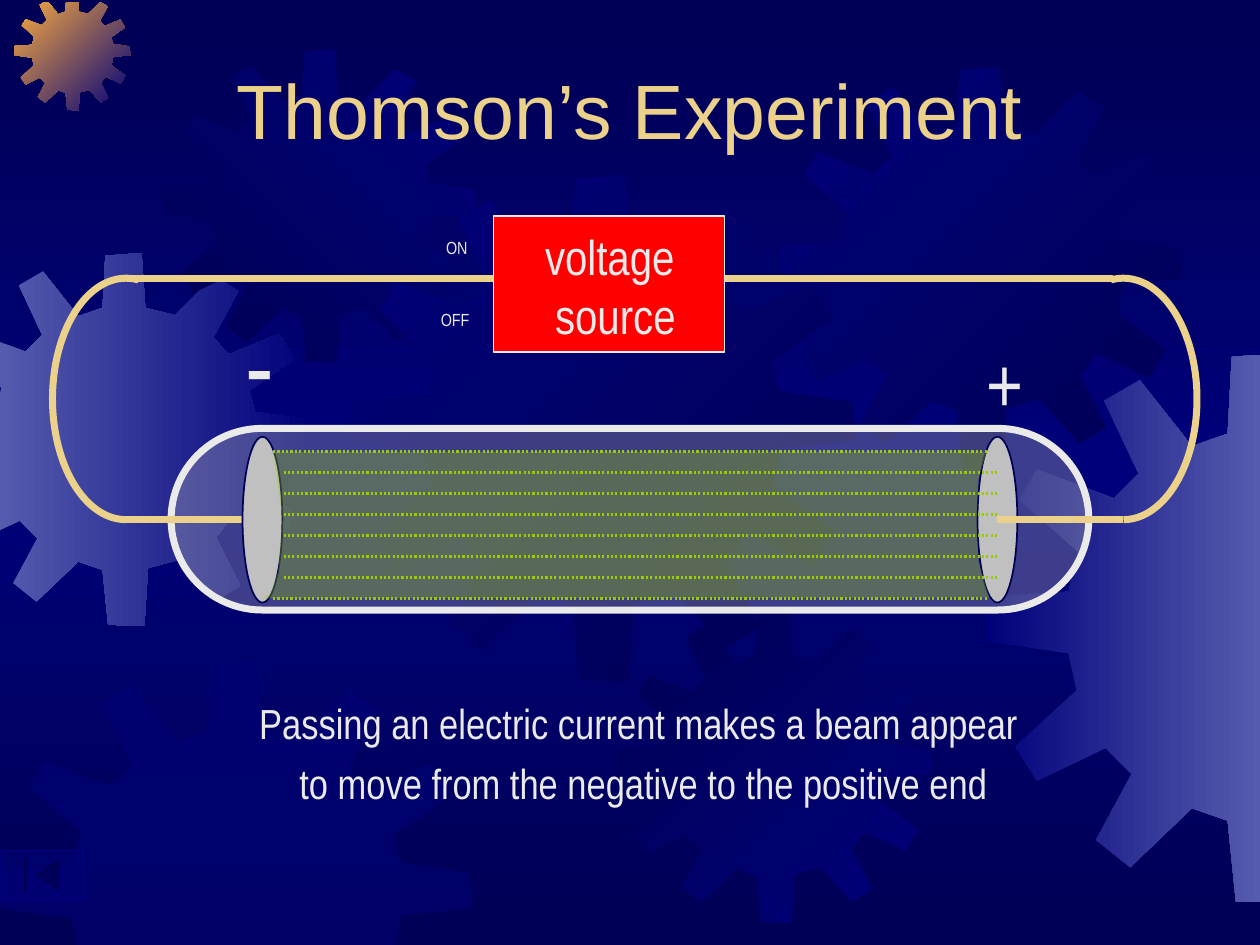
from dataclasses import dataclass
from typing import Optional

from lxml.etree import SubElement
from pptx import Presentation
from pptx.dml.color import RGBColor
from pptx.enum.dml import MSO_LINE
from pptx.enum.shapes import MSO_CONNECTOR, MSO_SHAPE
from pptx.enum.text import MSO_ANCHOR, PP_ALIGN
from pptx.oxml.ns import qn
from pptx.util import Emu, Inches, Pt

COLUMNS, ROWS = 120, 90
CELL = Inches(10) // COLUMNS
NAVY, BLUE, LILAC, ORANGE = "000054", "00007A", "555BAD", "FCAB40"
GOLD, PALE, SILVER, RED, GREEN = "EBD189", "EAEAEA", "C0C0C0", "FF0000", "99CC00"

# Outline of a gear, on a square of GEAR_SIZE units
GEAR_SIZE = 401
GEAR = [
    (255, 67), (223, 59), (219, 0), (180, 3), (177, 59), (151, 68), (113, 20), (87, 35),
    (112, 88), (94, 106), (38, 85), (25, 107), (68, 145), (61, 174), (1, 178), (0, 210),
    (61, 219), (67, 246), (22, 287), (38, 312), (88, 288), (107, 307), (81, 355), (106, 375),
    (151, 332), (177, 341), (183, 400), (222, 401), (226, 339), (259, 330), (299, 374), (325, 358),
    (299, 306), (316, 284), (368, 309), (384, 281), (336, 246), (342, 216), (401, 210), (400, 180),
    (341, 171), (335, 148), (383, 114), (367, 87), (313, 109), (296, 91), (323, 41), (297, 25),
]
BEAM = [(26, 43), (94, 43), (93.2, 45.5), (93, 49.7), (93.2, 53.5), (94.2, 56.9),
        (25, 57), (25.8, 56.5), (26.5, 54.4), (26.9, 49.4)]


@dataclass
class Gear:
    left: float
    top: float
    size: float
    start: str
    end: Optional[str] = None
    angle: int = 0


@dataclass
class Label:
    text: str
    box: tuple
    size: float
    align: PP_ALIGN = PP_ALIGN.LEFT
    wrap: bool = False
    gap: float = 0


GEARS = [
    Gear(-5.9, 24.1, 35.5, LILAC, BLUE),
    Gear(1.4, -0.5, 11, ORANGE, BLUE, 45),
    Gear(15.6, 4.7, 29.8, NAVY, BLUE, 315),
    Gear(33.2, 16.7, 48.2, BLUE, NAVY, 45),
    Gear(0, 63, 44.9, BLUE),
    Gear(58.9, 58.1, 29.8, NAVY, BLUE, 45),
    Gear(74.2, 6.4, 38.4, BLUE, NAVY, 45),
    Gear(93.8, 33.6, 52.4, BLUE, LILAC),
]
POLES = [
    Label("+", (92.8, 31.4, 6.7, 10), 44),
    Label("-", (22.2, 27.8, 5.8, 13.2), 60),
]
SOURCE = Label("voltage \nsource", (49.2, 21, 18.8, 12.4), 28, PP_ALIGN.CENTER)
SWITCH = [
    Label("OFF", (40.8, 28.8, 5.8, 3.2), 10),
    Label("ON", (41.3, 22, 4.9, 3.2), 10),
]
CAPTION = Label(
    "Passing an electric current makes a beam appear \n"
    "to move from the negative to the positive end",
    (15.4, 65.8, 91.7, 11.8), 24, PP_ALIGN.CENTER, wrap=True, gap=5.5)


def cells(*values: float) -> list:
    return [Emu(round(value * CELL)) for value in values]


def color(hex_value: str) -> RGBColor:
    return RGBColor.from_string(hex_value)


def paint(shape, hex_value: str, opacity: int = 100) -> None:
    shape.fill.solid()
    shape.fill.fore_color.rgb = color(hex_value)
    if opacity < 100:
        solid = shape.element.spPr.find(qn("a:solidFill"))
        SubElement(solid[0], qn("a:alpha"), val=str(opacity * 1000))


def paint_gradient(fill, element, colors: list, angle: int) -> None:
    """Spread the colours evenly; the angle runs clockwise."""
    fill.gradient()
    gradient = element.find(".//" + qn("a:gradFill"))
    stops = gradient.find(qn("a:gsLst"))
    for stop in list(stops):
        stops.remove(stop)
    for index, hex_value in enumerate(colors):
        position = index * 100000 // (len(colors) - 1)
        stop = SubElement(stops, qn("a:gs"), pos=str(position))
        SubElement(stop, qn("a:srgbClr"), val=hex_value)
    gradient.find(qn("a:lin")).set("ang", str(angle * 60000))


def clip(points: list, axis: int, limit: float, side: int) -> list:
    """Cut a polygon at a limit, keeping the part above (side 1) or below (side -1)."""
    kept = []
    for first, second in zip(points, points[1:] + points[:1]):
        first_in, second_in = ((point[axis] - limit) * side >= 0 for point in (first, second))
        if first_in:
            kept.append(first)
        if first_in != second_in:
            share = (limit - first[axis]) / (second[axis] - first[axis])
            kept.append(tuple(a + share * (b - a) for a, b in zip(first, second)))
    return kept


def add_polygon(slide, points: list):
    corners = [cells(*point) for point in points]
    builder = slide.shapes.build_freeform(*corners[0])
    builder.add_line_segments(corners[1:], close=True)
    shape = builder.convert_to_shape()
    shape.shadow.inherit = False
    shape.line.fill.background()
    return shape


def add_gear(slide, gear: Gear) -> None:
    scale = gear.size / GEAR_SIZE
    points = [(gear.left + x * scale, gear.top + y * scale) for x, y in GEAR]
    for edge in ((0, 0, 1), (0, COLUMNS, -1), (1, 0.2, 1), (1, ROWS, -1)):
        points = clip(points, *edge)
    shape = add_polygon(slide, points)
    if gear.end:
        paint_gradient(shape.fill, shape.element, [gear.start, gear.end], gear.angle)
    else:
        paint(shape, gear.start, 50)


def add_preset(slide, kind, box: tuple, fill: Optional[str], line: str, width: float,
               opacity: int = 100, adjustments: tuple = ()) -> None:
    shape = slide.shapes.add_shape(kind, *cells(*box))
    shape.shadow.inherit = False
    for index, value in enumerate(adjustments):
        shape.adjustments[index] = value
    if fill:
        paint(shape, fill, opacity)
    else:
        shape.fill.background()
    shape.line.color.rgb = color(line)
    shape.line.width = Pt(width)


def add_line(slide, start: float, end: float, row: float, line: str, width: float,
             dash: Optional[MSO_LINE] = None) -> None:
    connector = slide.shapes.add_connector(MSO_CONNECTOR.STRAIGHT, *cells(start, row, end, row))
    connector.line.color.rgb = color(line)
    connector.line.width = Pt(width)
    if dash:
        connector.line.dash_style = dash
    SubElement(connector.element.spPr, qn("a:effectLst"))


def write(frame, text: str, *, size: float, font: str = "Arial Narrow", ink: str = PALE,
          align=PP_ALIGN.LEFT, wrap: bool = False, gap: float = 0) -> None:
    frame.word_wrap = wrap
    for index, line in enumerate(text.split("\n")):
        paragraph = frame.add_paragraph() if index else frame.paragraphs[0]
        paragraph.alignment = align
        paragraph.space_before = Pt(gap if index else 0)
        run = paragraph.add_run()
        run.text = line
        run.font.name, run.font.size = font, Pt(size)
        run.font.color.rgb = color(ink)


def add_label(slide, label: Label) -> None:
    box = slide.shapes.add_textbox(*cells(*label.box))
    write(box.text_frame, label.text, size=label.size, align=label.align,
          wrap=label.wrap, gap=label.gap)


def place_title(slide, text: str) -> None:
    title = slide.shapes.title
    title.left, title.top, title.width, title.height = cells(7.8, 5.4, 104.4, 10)
    title.text_frame.vertical_anchor = MSO_ANCHOR.MIDDLE
    write(title.text_frame, text, size=44, font="Arial", ink=GOLD,
          align=PP_ALIGN.CENTER, wrap=True)
    slide.shapes.element.append(title.element)  # in front of the gears


def main() -> None:
    presentation = Presentation()
    presentation.slide_width, presentation.slide_height = cells(COLUMNS, ROWS)
    slide = presentation.slides.add_slide(presentation.slide_layouts[5])
    paint_gradient(slide.background.fill, slide.element, [NAVY, BLUE, NAVY], 90)
    for gear in GEARS:
        add_gear(slide, gear)
    place_title(slide, "Thomson’s Experiment")
    for label in POLES:
        add_label(slide, label)

    add_preset(slide, MSO_SHAPE.ROUNDED_RECTANGLE, (16.3, 40.8, 87.4, 17.3), SILVER, PALE, 4,
               opacity=32, adjustments=(0.5,))
    add_preset(slide, MSO_SHAPE.OVAL, (93.1, 41.6, 3.8, 15.8), SILVER, NAVY, 1)
    for start, end, arc_left, angles in ((24, 12, 5, (54, 165.6)), (95, 107, 100, (158.4, 54))):
        add_line(slide, start, end, 49.5, GOLD, 4)
        add_preset(slide, MSO_SHAPE.ARC, (arc_left, 26.5, 14, 23), None, GOLD, 4,
                   adjustments=angles)
    add_line(slide, 12, 106, 26.5, GOLD, 4)
    add_preset(slide, MSO_SHAPE.OVAL, (23.1, 41.6, 3.8, 15.8), SILVER, NAVY, 1)
    add_preset(slide, MSO_SHAPE.RECTANGLE, (47, 20.6, 22, 12.9), RED, PALE, 1)
    add_label(slide, SOURCE)

    for row in range(43, 58, 2):
        start = 26 if row in (43, 57) else 27
        add_line(slide, start, start + 68, row, GREEN, 1.25, MSO_LINE.ROUND_DOT)
    for label in SWITCH:
        add_label(slide, label)
    paint(add_polygon(slide, BEAM), GREEN, 31)
    add_label(slide, CAPTION)
    add_preset(slide, MSO_SHAPE.ACTION_BUTTON_BEGINNING, (0, 81, 8, 4.7), BLUE, BLUE, 0.75,
               opacity=50)
    presentation.save("out.pptx")


if __name__ == "__main__":
    main()
